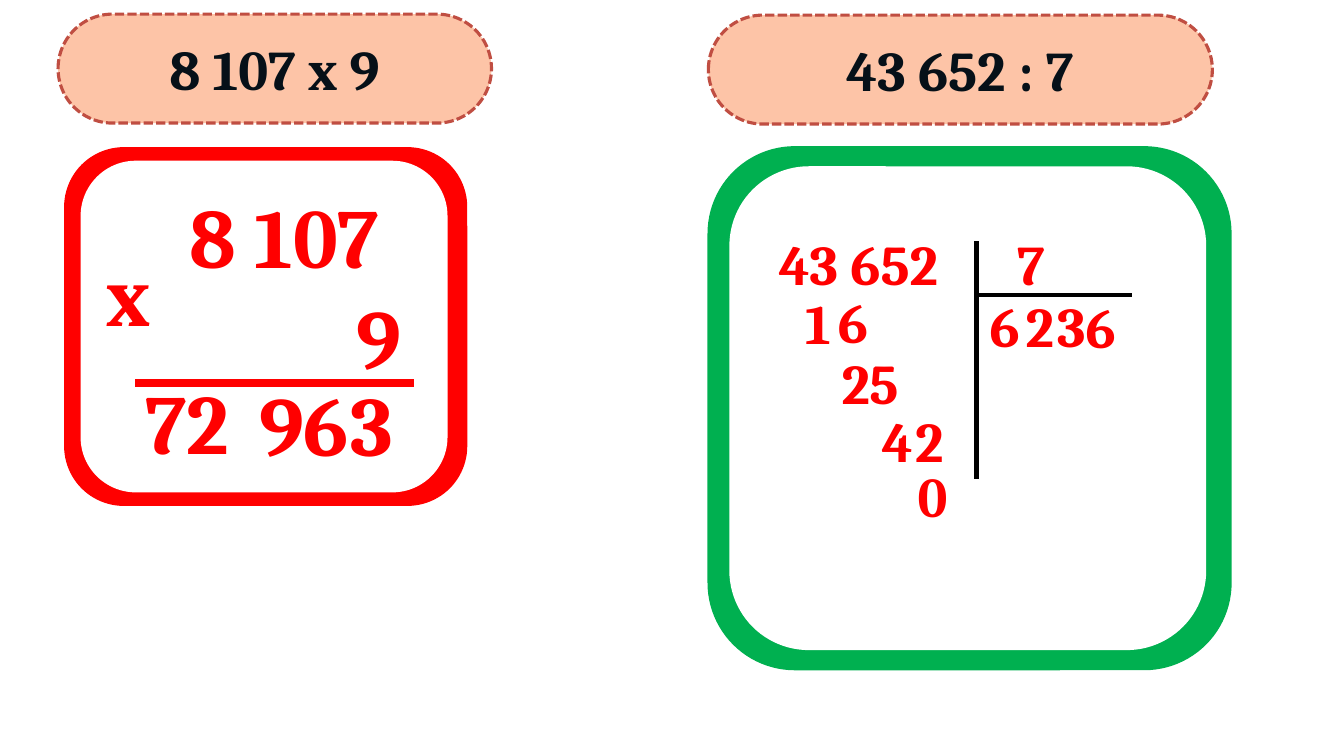
from lxml import etree
from pptx import Presentation
from pptx.dml.color import RGBColor
from pptx.enum import dml, shapes, text
from pptx.oxml import ns
from pptx.util import Pt

RED = "FF0000"
INK = "061018"
LEFT = text.PP_ALIGN.LEFT
MID = text.PP_ALIGN.CENTER
RIGHT = text.PP_ALIGN.RIGHT


def color(code):
    return RGBColor.from_string(code)


def write(para, words, size, code=RED):
    run = para.add_run()
    run.text = words
    font = run.font
    font.name = "Cambria"
    font.size = Pt(size)
    font.bold = True
    font.color.rgb = color(code)


def panel(group, left, top, width, height, fill):
    box = group.shapes.add_shape(
        shapes.MSO_SHAPE.ROUNDED_RECTANGLE,
        Pt(left), Pt(top), Pt(width), Pt(height))
    box.shadow.inherit = False
    box.fill.solid()
    box.fill.fore_color.rgb = color(fill)
    box.line.fill.background()
    return box


def frame(slide, outer, inner, fill):
    group = slide.shapes.add_group_shape()
    panel(group, *outer, fill)
    panel(group, *inner, "FFFFFF")


def label(holder, left, top, width, height):
    box = holder.shapes.add_textbox(
        Pt(left), Pt(top), Pt(width), Pt(height))
    body = box.text_frame
    body.word_wrap = True
    body.auto_size = text.MSO_AUTO_SIZE.SHAPE_TO_FIT_TEXT
    return body


def line(holder, left, top, width, words, size=40, code=RED, align=LEFT):
    body = label(holder, left, top, width, size * 1.17 + 7.2)
    para = body.paragraphs[0]
    para.alignment = align
    write(para, words, size, code)
    return body


def title(slide, left, top, width, words):
    group = slide.shapes.add_group_shape()
    pill = panel(group, left, top, width, 77.8, "FDC4A7")
    pill.adjustments[0] = 0.5
    pill.line.color.rgb = color("C04E42")
    pill.line.width = Pt(2.25)
    pill.line.dash_style = dml.MSO_LINE.SQUARE_DOT
    line(group, left + 4, top + 10.8, width - 8.6, words, 40, INK, MID)


def digit(slide, left, top, width, words):
    body = line(slide, left, top, width, words, align=RIGHT)
    body.margin_left = body.margin_right = 0
    body.margin_top = body.margin_bottom = 0


def rule(slide, start, end, code, width):
    edge = slide.shapes.add_connector(
        shapes.MSO_CONNECTOR.STRAIGHT,
        *(Pt(n) for n in start + end))
    edge.line.color.rgb = color(code)
    edge.line.width = Pt(width)
    etree.SubElement(edge._element.spPr, ns.qn("a:effectLst"))


def factors(slide):
    body = label(slide, 88.6, 128.2, 218.9, 152.6)
    first = body.paragraphs[0]
    first._p.get_or_add_pPr().set("marL", str(Pt(39.6)))
    write(first, "8 107", 60)
    second = body.add_paragraph()
    second.alignment = RIGHT
    second._p.get_or_add_pPr().set("marR", str(Pt(13.4)))
    write(second, "9", 60)


def product(slide):
    title(slide, 41.5, 10.1, 309.6, "8 107 x 9")
    factors(slide)
    line(slide, 69.1, 169.6, 44.6, "x", 60)
    rule(slide, (96.5, 273.6), (295.5, 273.6), RED, 6)
    for left, words in ((243.4, "3"), (209.5, "6"), (178.6, "9")):
        line(slide, left, 262.8, 57.6, words, 60)
    line(slide, 96.8, 261, 86.4, "72", 60)


def quotient(slide):
    title(slide, 506, 10.8, 360, "43 652 : 7")
    upper = [
        (535.7, 249.1, 85.7, "2"),
        (741.6, 208.1, 33.8, "3"),
        (667.2, 208.1, 85.7, "2"),
        (495.8, 164.2, 174.2, "43 652"),
        (660.6, 164.2, 85.7, "7"),
    ]
    for item in upper:
        digit(slide, *item)
    rule(slide, (697.5, 210.6), (808.6, 210.6), "000000", 3)
    rule(slide, (697.5, 342), (697.5, 172.1), "000000", 3)
    lower = [
        (642.7, 208.1, 85.7, "6"),
        (562.3, 205.9, 31, "1"),
        (566.4, 290.2, 85.7, "4"),
        (589, 205.2, 31, "6"),
    ]
    for item in lower:
        digit(slide, *item)
    line(slide, 614, 245.5, 40.3, "5")
    last = [
        (643, 290.5, 31, "2"),
        (763.2, 208.8, 33.8, "6"),
        (591, 329.8, 85.7, "0"),
    ]
    for item in last:
        digit(slide, *item)


def main():
    deck = Presentation()
    deck.slide_width = Pt(960)
    deck.slide_height = Pt(540)
    slide = deck.slides.add_slide(deck.slide_layouts[6])
    frame(slide, (505.4, 104.4, 374.4, 374.4),
          (521, 118.8, 340.6, 345.6), "00B050")
    frame(slide, (45.8, 105.1, 288, 256.3),
          (57.6, 114.8, 262.1, 236.9), RED)
    product(slide)
    quotient(slide)
    deck.save("out.pptx")


if __name__ == "__main__":
    main()
